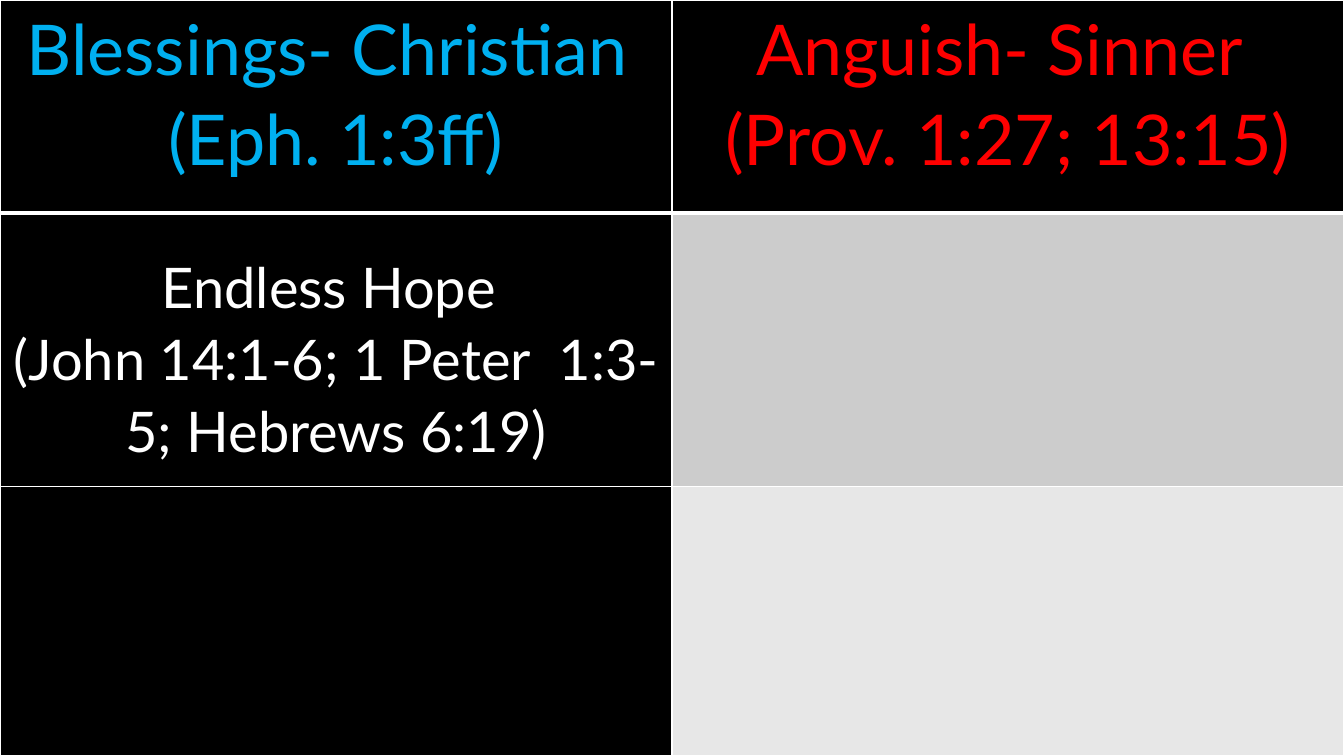
from dataclasses import dataclass

import pptx
import pptx.dml.color
import pptx.enum.text
import pptx.oxml
import pptx.oxml.ns
import pptx.table
import pptx.util

EMU_PER_PX = 9525
SLIDE_WIDTH, SLIDE_HEIGHT = 1280, 720
COLUMN_WIDTHS = (640, 640)
ROW_HEIGHTS = (203, 260, 257)


@dataclass(frozen=True)
class Theme:
    font: str = "Lato"
    heading_size: int = 50
    body_size: int = 40
    line_spacing: float = 1.07
    black: str = "000000"
    white: str = "FFFFFF"
    blessing: str = "00B0F0"
    anguish: str = "FF0000"
    dark_band: str = "CCCCCC"
    light_band: str = "E7E7E7"
    thin_rule: int = 1
    heading_rule: int = 3


THEME = Theme()


@dataclass(frozen=True)
class Entry:
    fill: str
    lines: tuple[str, ...] = ()
    color: str = THEME.white
    size: int = THEME.body_size
    top_margin: int = 0


COMPARISON = (
    (
        Entry(THEME.black, ("Blessings- Christian ", "(Eph. 1:3ff)"),
              THEME.blessing, THEME.heading_size),
        Entry(THEME.black, ("Anguish- Sinner ", "(Prov. 1:27; 13:15)"),
              THEME.anguish, THEME.heading_size),
    ),
    (
        Entry(THEME.black,
              ("Endless Hope ", "(John 14:1-6; 1 Peter  1:3-5; Hebrews 6:19)"),
              top_margin=34),
        Entry(THEME.dark_band),
    ),
    (Entry(THEME.black), Entry(THEME.light_band)),
)


def px(length: int) -> pptx.util.Emu:
    return pptx.util.Emu(length * EMU_PER_PX)


def rgb(color: str) -> pptx.dml.color.RGBColor:
    return pptx.dml.color.RGBColor.from_string(color)


def write_lines(frame, lines: tuple[str, ...], *, size: int, color: str) -> None:
    frame.word_wrap = True
    for index, line in enumerate(lines):
        paragraph = frame.paragraphs[0] if index == 0 else frame.add_paragraph()
        paragraph.alignment = pptx.enum.text.PP_ALIGN.CENTER
        paragraph.line_spacing = THEME.line_spacing
        run = paragraph.add_run()
        run.text = line
        run.font.name = THEME.font
        run.font.size = pptx.util.Pt(size)
        run.font.color.rgb = rgb(color)


def rule_cell(cell: pptx.table._Cell, row: int) -> None:
    properties = cell._tc.get_or_add_tcPr()
    for side in ("L", "R", "T", "B"):
        under_heading = (row, side) in ((0, "B"), (1, "T"))
        width = THEME.heading_rule if under_heading else THEME.thin_rule
        properties.append(pptx.oxml.parse_xml(
            f'<a:ln{side} {pptx.oxml.ns.nsdecls("a")} w="{pptx.util.Pt(width)}">'
            f'<a:solidFill><a:srgbClr val="{THEME.white}"/></a:solidFill>'
            f'</a:ln{side}>'
        ))


def draw_entry(cell: pptx.table._Cell, entry: Entry, row: int) -> None:
    rule_cell(cell, row)
    cell.fill.solid()
    cell.fill.fore_color.rgb = rgb(entry.fill)
    cell.margin_left = cell.margin_right = px(7)
    cell.margin_top = px(entry.top_margin)
    cell.margin_bottom = px(0)
    write_lines(cell.text_frame, entry.lines, size=entry.size, color=entry.color)


def main() -> None:
    presentation = pptx.Presentation()
    presentation.slide_width = px(SLIDE_WIDTH)
    presentation.slide_height = px(SLIDE_HEIGHT)
    slide = presentation.slides.add_slide(presentation.slide_layouts[6])
    slide.background.fill.solid()
    slide.background.fill.fore_color.rgb = rgb(THEME.black)

    comparison = slide.shapes.add_table(
        len(ROW_HEIGHTS), len(COLUMN_WIDTHS),
        px(0), px(0), px(SLIDE_WIDTH), px(SLIDE_HEIGHT),
    ).table
    comparison.first_row = False
    comparison.horz_banding = False
    for column, width in zip(comparison.columns, COLUMN_WIDTHS):
        column.width = px(width)
    for row, height in zip(comparison.rows, ROW_HEIGHTS):
        row.height = px(height)
    for row_index, entries in enumerate(COMPARISON):
        for column_index, entry in enumerate(entries):
            draw_entry(comparison.cell(row_index, column_index), entry, row_index)

    presentation.save("out.pptx")


if __name__ == "__main__":
    main()
